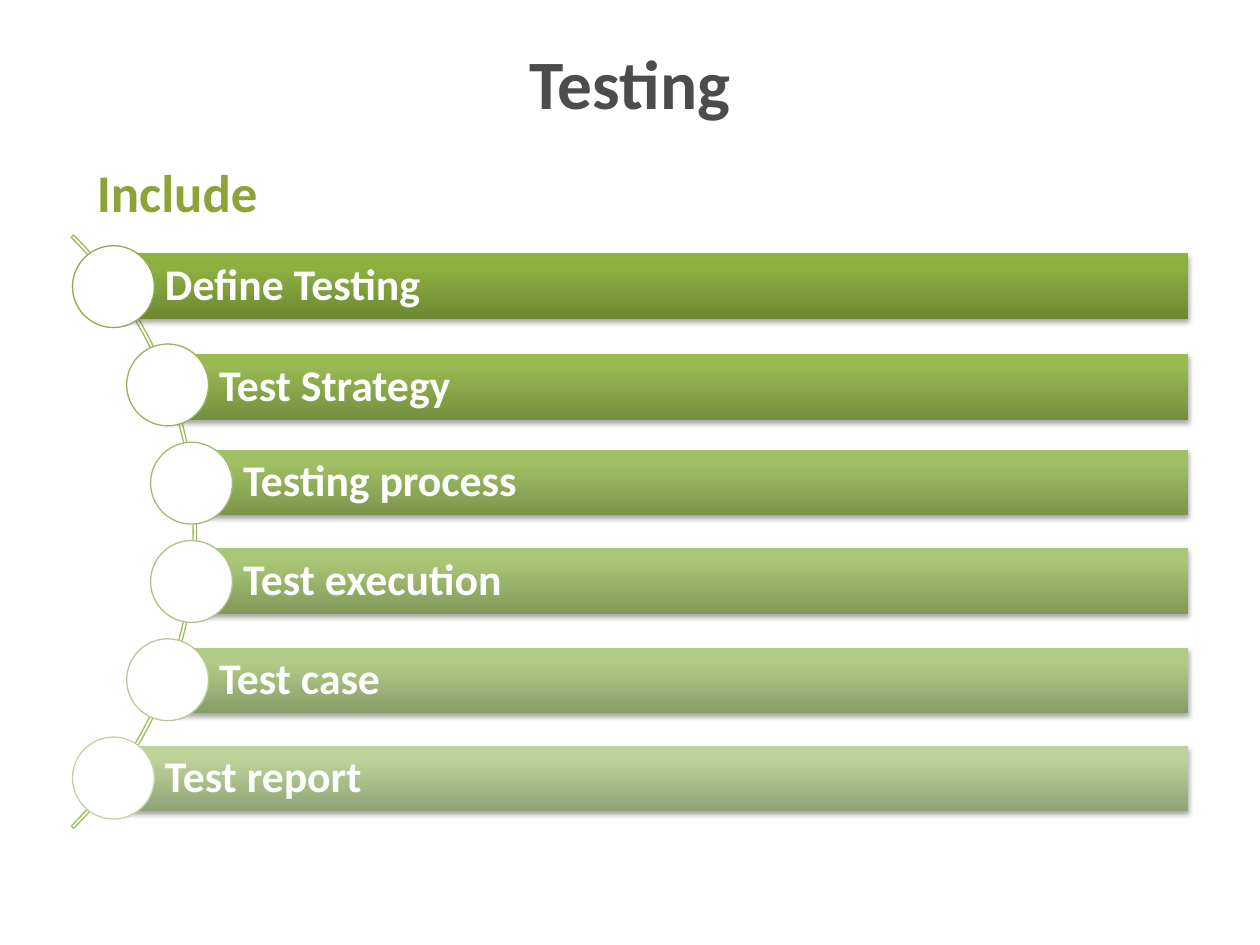
from dataclasses import dataclass

from lxml import etree
from pptx import Presentation
from pptx.dml.color import RGBColor
from pptx.enum import shapes as sh, text as tx
from pptx.oxml.ns import qn
from pptx.util import Inches, Pt

RIGHT = 9.43
BAR_H = 0.52
DOT = 0.65
DOT_TOP = 1.95
STEP = 0.78


@dataclass
class Item:
    label: str
    left: float
    top: float
    grad: tuple[str, str, str]
    ring: str


ITEMS = [
    Item("Define Testing", 0.9, 2.01, ("6C8932", "8DB141", "8EB43F"), "8DAA51"),
    Item("Test Strategy", 1.33, 2.81, ("748F3F", "96B951", "98BC50"), "97B360"),
    Item("Testing process", 1.52, 3.57, ("7B944D", "9FC064", "A1C262"), "A1BB72"),
    Item("Test execution", 1.52, 4.35, ("82985A", "A9C676", "AAC875"), "ACC383"),
    Item("Test case", 1.33, 5.14, ("899D68", "B2CC87", "B4CF87"), "B6CB94"),
    Item("Test report", 0.9, 5.92, ("91A276", "BDD399", "BED599"), "C1D3A5"),
]


def rgb(code: str) -> RGBColor:
    return RGBColor.from_string(code)


def write(shape, words: str, size: float, color: str, align) -> None:
    frame = shape.text_frame
    frame.text = words
    frame.word_wrap = True
    frame.vertical_anchor = tx.MSO_ANCHOR.MIDDLE
    para = frame.paragraphs[0]
    para.alignment = align
    font = para.runs[0].font
    font.name, font.size, font.bold = "Calibri", Pt(size), True
    font.color.rgb = rgb(color)


def add_shape(slide, kind, left: float, top: float, width: float, height: float):
    shape = slide.shapes.add_shape(
        kind, Inches(left), Inches(top), Inches(width), Inches(height))
    shape.shadow.inherit = False
    return shape


def outline(shape, color: str) -> None:
    shape.line.color.rgb = rgb(color)
    shape.line.width = Pt(0.75)


def add_color(parent, code: str):
    return etree.SubElement(parent, qn("a:srgbClr"), val=code)


def shade(shape, colors: tuple[str, str, str]) -> None:
    """Fill from bottom to top with three stops."""
    shape.fill.gradient()
    grad = shape._element.spPr.find(qn("a:gradFill"))
    stops = grad.find(qn("a:gsLst"))
    for stop in list(stops):
        stops.remove(stop)
    for place, code in zip((0, 80, 100), colors):
        add_color(etree.SubElement(stops, qn("a:gs"), pos=str(place * 1000)), code)
    grad.find(qn("a:lin")).set("ang", str(270 * 60000))


def drop_shadow(shape) -> None:
    effects = shape._element.spPr.find(qn("a:effectLst"))
    shadow = etree.SubElement(
        effects, qn("a:outerShdw"), blurRad=str(Pt(3.1)), dist=str(Pt(1.8)),
        dir=str(90 * 60000), rotWithShape="0")
    etree.SubElement(add_color(shadow, "000000"), qn("a:alpha"), val="35000")


def add_item(slide, row: int, item: Item) -> None:
    bar = add_shape(slide, sh.MSO_SHAPE.RECTANGLE,
                    item.left, item.top, RIGHT - item.left, BAR_H)
    shade(bar, item.grad)
    bar.line.fill.background()
    drop_shadow(bar)
    write(bar, item.label, 25, "FFFFFF", tx.PP_ALIGN.LEFT)
    frame = bar.text_frame
    frame.margin_left = Inches(0.41)
    frame.margin_right = frame.margin_top = frame.margin_bottom = Inches(0.07)
    frame.paragraphs[0].line_spacing = 0.9

    dot = add_shape(slide, sh.MSO_SHAPE.OVAL,
                    item.left - DOT / 2, DOT_TOP + row * STEP, DOT, DOT)
    dot.fill.solid()
    dot.fill.fore_color.rgb = rgb("FFFFFF")
    outline(dot, item.ring)


def add_arc(slide) -> None:
    arc = add_shape(slide, sh.MSO_SHAPE.BLOCK_ARC, -5.1, 0.89, 6.66, 6.66)
    for i, value in enumerate((189, 27, 0.004)):
        arc.adjustments[i] = value
    arc.fill.background()
    outline(arc, "9CBC5D")


def main() -> None:
    deck = Presentation()
    deck.slide_width, deck.slide_height = Inches(10), Inches(7.5)
    slide = deck.slides.add_slide(deck.slide_layouts[5])

    title = slide.shapes.title
    title.left, title.top = Inches(0.5), Inches(0.3)
    title.width, title.height = Inches(9), Inches(0.7)
    write(title, "Testing", 39.6, "4C4C4C", tx.PP_ALIGN.CENTER)

    add_arc(slide)
    for row, item in enumerate(ITEMS):
        add_item(slide, row, item)

    head = slide.shapes.add_textbox(
        Inches(0.67), Inches(1.17), Inches(9), Inches(0.7))
    write(head, "Include", 30.2, "8CA338", tx.PP_ALIGN.LEFT)

    deck.save("out.pptx")


if __name__ == "__main__":
    main()
